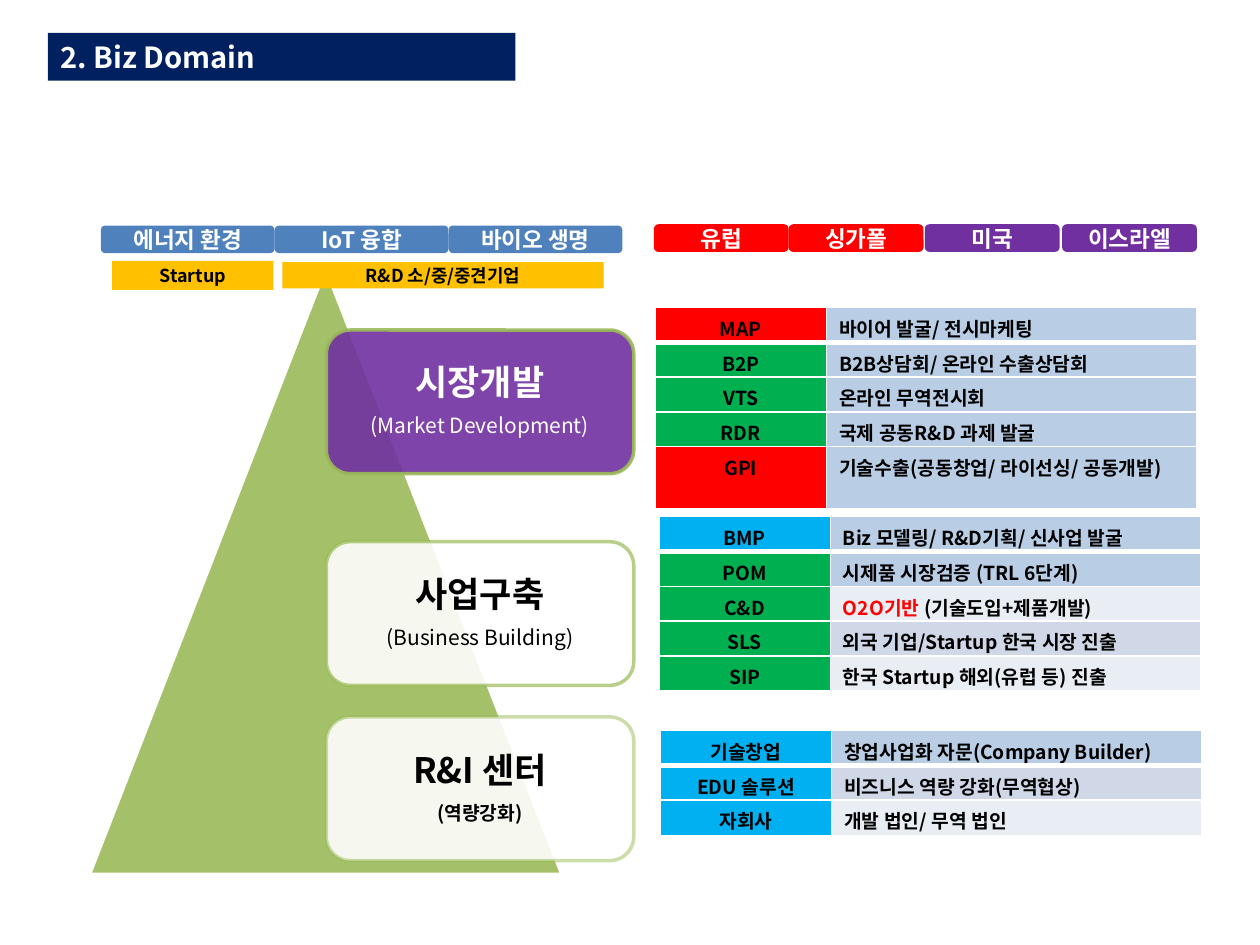
from dataclasses import dataclass

import pptx
import pptx.util
import pptx.dml.color
import pptx.enum.shapes
import pptx.enum.text
import pptx.oxml.ns
from lxml import etree

Pt = pptx.util.Pt
qn = pptx.oxml.ns.qn
SHAPE = pptx.enum.shapes.MSO_SHAPE
ALIGN = pptx.enum.text.PP_ALIGN
MIDDLE = pptx.enum.text.MSO_ANCHOR.MIDDLE

FONT = "Noto Sans CJK KR"
COLORS = {
    "white": "FFFFFF", "black": "000000", "navy": "002060", "blue": "4F81BD",
    "olive": "9BBB59", "purple": "7030A0", "amber": "FFC000", "red": "FF0000",
    "green": "00B050", "sky": "00B0F0", "light blue": "B9CDE5",
    "band dark": "D0D8E8", "band light": "E9EDF4",
}

prs = pptx.Presentation()
prs.slide_width = pptx.util.Inches(10)
prs.slide_height = pptx.util.Inches(7.5)


@dataclass
class Box:
    """Place and size in percent of the slide's width and height."""
    left: float
    top: float
    width: float
    height: float

    def emu(self) -> list[int]:
        w, h = prs.slide_width, prs.slide_height
        pairs = ((self.left, w), (self.top, h), (self.width, w), (self.height, h))
        return [round(share * side / 100) for share, side in pairs]


@dataclass
class Label:
    text: str
    box: Box
    fill: str
    size: float = 12.9
    color: str = "white"
    shape: int = SHAPE.ROUNDED_RECTANGLE


@dataclass
class Stage:
    name: str
    note: str
    top: float
    fill: str
    color: str
    line_alpha: int
    note_size: float = 12
    note_bold: bool = False


@dataclass
class Row:
    code: str
    code_fill: str
    text: str
    fill: str = "light blue"
    lead: str = ""


@dataclass
class Program:
    box: Box
    heights: list[float]
    rows: list[Row]


def rgb(name: str):
    return pptx.dml.color.RGBColor.from_string(COLORS[name])


def paint(fill, color: str, alpha: int = 100) -> None:
    fill.solid()
    fill.fore_color.rgb = rgb(color)
    if alpha < 100:
        node = fill._xPr.find(qn("a:solidFill"))[0]
        etree.SubElement(node, qn("a:alpha"), val=str(alpha * 1000))


def style(r, size: float, color: str, bold: bool = True) -> None:
    r.font.size, r.font.bold, r.font.name = Pt(size), bold, FONT
    r.font.color.rgb = rgb(color)
    ea = etree.Element(qn("a:ea"), typeface=FONT)
    r._r.rPr.find(qn("a:latin")).addnext(ea)


def add_shape(s, kind: int, box: Box, fill: str, alpha: int = 100):
    sp = s.shapes.add_shape(kind, *box.emu())
    sp.shadow.inherit = False
    paint(sp.fill, fill, alpha)
    sp.line.fill.background()
    return sp


def outline(sp, color: str, alpha: int = 100) -> None:
    sp.line.width = Pt(2)
    paint(sp.line.fill, color, alpha)


def add_label(s, label: Label) -> None:
    tf = add_shape(s, label.shape, label.box, label.fill).text_frame
    tf.margin_left = tf.margin_right = tf.margin_top = tf.margin_bottom = 0
    tf.vertical_anchor = MIDDLE
    p = tf.paragraphs[0]
    p.text, p.alignment = label.text, ALIGN.CENTER
    style(p.runs[0], label.size, label.color)


def add_stage(s, stage: Stage) -> None:
    box = Box(25.9, stage.top, 24.4, 15.2)
    sp = add_shape(s, SHAPE.ROUNDED_RECTANGLE, box, stage.fill, 90)
    outline(sp, "olive", stage.line_alpha)
    tf = sp.text_frame
    tf.vertical_anchor = MIDDLE
    tf.text = f"{stage.name}\n{stage.note}"
    formats = ((20, True), (stage.note_size, stage.note_bold))
    for p, (size, bold) in zip(tf.paragraphs, formats):
        p.alignment, p.line_spacing, p.space_after = ALIGN.CENTER, 0.9, Pt(size * 0.35)
        style(p.runs[0], size, stage.color, bold)


def add_borders(cell, bottom: float) -> None:
    tcPr = cell._tc.get_or_add_tcPr()
    for i, (side, width) in enumerate(zip("LRTB", (1, 1, 1, bottom))):
        ln = etree.Element(qn(f"a:ln{side}"), w=str(Pt(width)))
        solid = etree.SubElement(ln, qn("a:solidFill"))
        etree.SubElement(solid, qn("a:srgbClr"), val=COLORS["white"])
        tcPr.insert(i, ln)


def add_program(s, program: Program) -> None:
    table = s.shapes.add_table(len(program.rows), 2, *program.box.emu()).table
    table.horz_banding = False
    for column, share in zip(table.columns, (13.6, 29.4)):
        column.width = round(prs.slide_width * share / 100)
    for i, (row, height) in enumerate(zip(program.rows, program.heights)):
        table.rows[i].height = round(prs.slide_height * height / 100)
        for j, fill in enumerate((row.code_fill, row.fill)):
            cell = table.cell(i, j)
            cell.margin_bottom = 0
            paint(cell.fill, fill)
            add_borders(cell, 3 if i == 0 else 1)
            p = cell.text_frame.paragraphs[0]
            if j == 0:
                p.text, p.alignment = row.code, ALIGN.CENTER
            else:
                p.text = row.lead or row.text
                if row.lead:
                    p.add_run().text = row.text
            for k, r in enumerate(p.runs):
                style(r, 11, "red" if j and row.lead and k == 0 else "black")


# Contents
FIELDS = ["에너지 환경", "IoT 융합", "바이오 생명"]
REGIONS = [("유럽", "red", 51.9), ("싱가폴", "red", 62.6),
           ("미국", "purple", 73.4), ("이스라엘", "purple", 84.3)]
CLIENTS = [("Startup", Box(8.9, 27.6, 12.8, 3.07)),
           ("R&D 소/중/중견기업", Box(22.4, 27.73, 25.5, 2.8))]
STAGES = [
    Stage("시장개발", "(Market Development)", 34.93, "purple", "white", 90),
    Stage("사업구축", "(Business Building)", 57.33, "white", "black", 70),
    Stage("R&I 센터", "(역량강화)", 75.87, "white", "black", 50, 11, True),
]
PROGRAMS = [
    Program(Box(52, 32.53, 43, 18.4), [3.69] * 5, [
        Row("MAP", "red", "바이어 발굴/ 전시마케팅"),
        Row("B2P", "green", "B2B상담회/ 온라인 수출상담회"),
        Row("VTS", "green", "온라인 무역전시회"),
        Row("RDR", "green", "국제 공동R&D 과제 발굴"),
        Row("GPI", "red", "기술수출(공동창업/ 라이선싱/ 공동개발)")]),
    Program(Box(52.3, 54.67, 43, 18.4), [3.69] * 5, [
        Row("BMP", "sky", "Biz 모델링/ R&D기획/ 신사업 발굴"),
        Row("POM", "green", "시제품 시장검증 (TRL 6단계)"),
        Row("C&D", "green", "(기술도입+제품개발)", "band light", "O2O기반 "),
        Row("SLS", "green", "외국 기업/Startup 한국 시장 진출", "band dark"),
        Row("SIP", "green", "한국 Startup 해외(유럽 등) 진출", "band light")]),
    Program(Box(52.4, 77.33, 43, 11.2), [3.69, 3.6, 3.8], [
        Row("기술창업", "sky", "창업사업화 자문(Company Builder)"),
        Row("EDU 솔루션", "sky", "비즈니스 역량 강화(무역협상)", "band dark"),
        Row("자회사", "sky", "개발 법인/ 무역 법인", "band light")]),
]

# Title
s = prs.slides.add_slide(prs.slide_layouts[5])
title = s.shapes.title
title.left, title.top, title.width, title.height = Box(3.8, 3.47, 37.1, 5.07).emu()
paint(title.fill, "navy")
tf = title.text_frame
tf.text = "2. Biz Domain"
tf.auto_size, tf.vertical_anchor = pptx.enum.text.MSO_AUTO_SIZE.NONE, MIDDLE
tf.paragraphs[0].alignment = ALIGN.LEFT
style(tf.paragraphs[0].runs[0], 16.6, "white")

# Pyramid and its stages
pyramid = add_shape(s, SHAPE.ISOSCELES_TRIANGLE, Box(7.1, 28.4, 37.5, 64.13), "olive", 90)
outline(pyramid, "white")
for stage in STAGES:
    add_stage(s, stage)

# Header labels
for text, box in CLIENTS:
    add_label(s, Label(text, box, "amber", 10.2, "black", SHAPE.RECTANGLE))
for i, text in enumerate(FIELDS):
    add_label(s, Label(text, Box(8 + 13.8 * i, 23.87, 13.8, 2.93), "blue"))
for text, fill, left in REGIONS:
    add_label(s, Label(text, Box(left, 23.73, 10.7, 2.93), fill))

# Program tables
for program in PROGRAMS:
    add_program(s, program)

prs.save("out.pptx")
